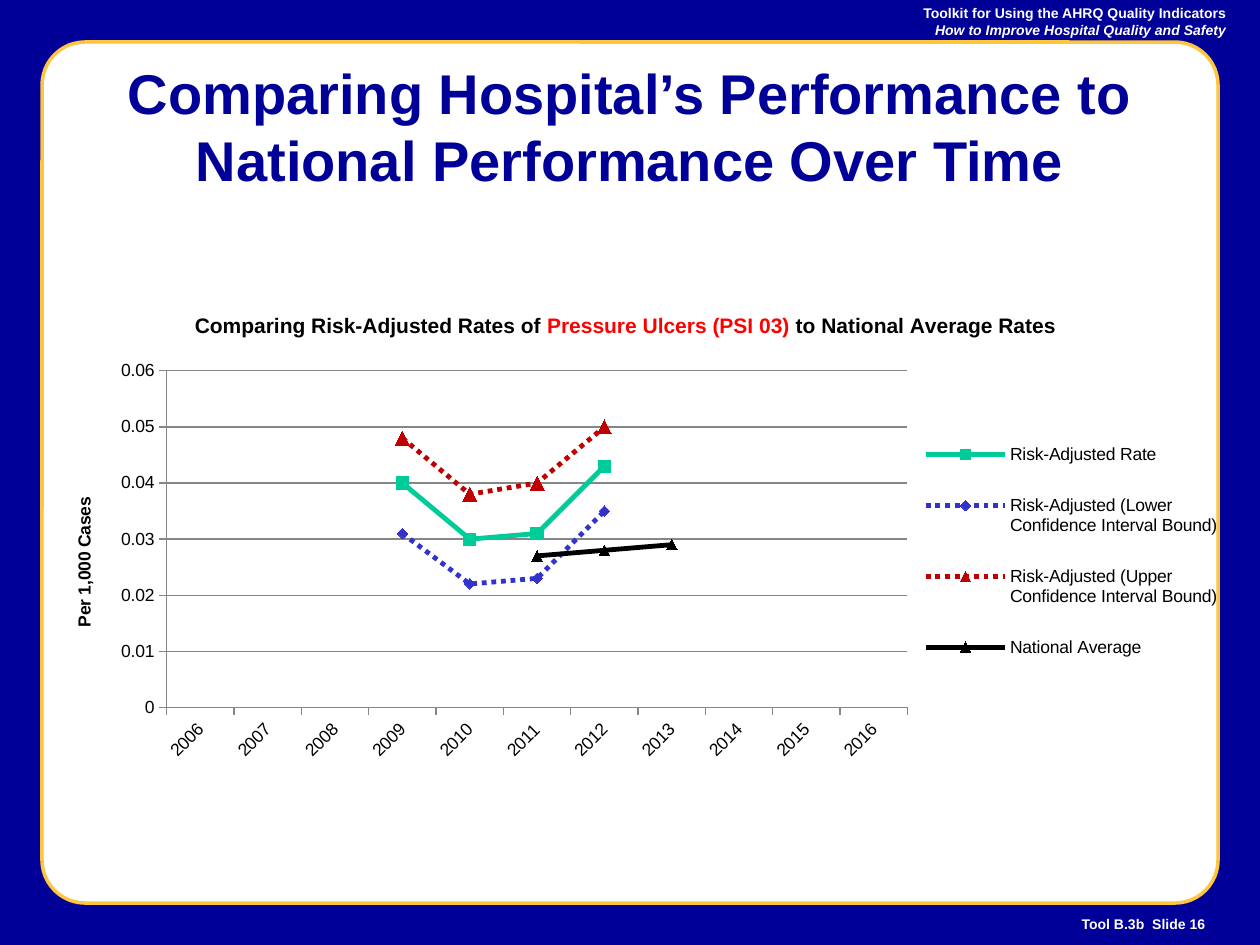
import lxml.etree
import pptx
import pptx.chart.data
import pptx.dml.color
import pptx.enum.chart
import pptx.enum.dml
import pptx.enum.shapes
import pptx.enum.text
import pptx.oxml.ns
import pptx.util

Pt = pptx.util.Pt
qn = pptx.oxml.ns.qn
Align = pptx.enum.text.PP_ALIGN
Marker = pptx.enum.chart.XL_MARKER_STYLE
Dash = pptx.enum.dml.MSO_LINE

NAVY, GOLD, WHITE, BLACK, GREY = "000099", "FFC53D", "FFFFFF", "000000", "868686"
YEARS = [str(year) for year in range(2006, 2017)]
# name, first year, values, colour, dash, marker, marker size
SERIES = [
    ("Risk-Adjusted Rate", 2009, [0.04, 0.03, 0.031, 0.043],
     "00CC99", Dash.SOLID, Marker.SQUARE, 7),
    ("Risk-Adjusted (Lower Confidence Interval Bound)", 2009,
     [0.031, 0.022, 0.023, 0.035], "3333CC", Dash.ROUND_DOT, Marker.DIAMOND, 6),
    ("Risk-Adjusted (Upper Confidence Interval Bound)", 2009,
     [0.048, 0.038, 0.04, 0.05], "C00000", Dash.ROUND_DOT, Marker.TRIANGLE, 8),
    ("National Average", 2011, [0.027, 0.028, 0.029],
     BLACK, Dash.SOLID, Marker.TRIANGLE, 6),
]


def rgb(value):
    return pptx.dml.color.RGBColor.from_string(value)


def set_font(font, color, **formats):
    for name, value in {"name": "Arial", **formats}.items():
        setattr(font, name, value)
    font.color.rgb = rgb(color)


def set_line(line, color, width, dash=Dash.SOLID):
    line.color.rgb = rgb(color)
    line.width = Pt(width)
    line.dash_style = dash


def add_panel(page, kind, bounds, fill):
    panel = page.shapes.add_shape(kind, *map(Pt, bounds))
    panel.shadow.inherit = False
    panel.fill.solid()
    panel.fill.fore_color.rgb = rgb(fill)
    panel.line.fill.background()
    return panel


def add_text(page, bounds, lines, align, color, **formats):
    """Lines are pairs of wording and italic."""
    box = page.shapes.add_textbox(*map(Pt, bounds))
    frame = box.text_frame
    frame.word_wrap = True
    frame.vertical_anchor = pptx.enum.text.MSO_ANCHOR.MIDDLE
    for number, (wording, italic) in enumerate(lines):
        para = frame.add_paragraph() if number else frame.paragraphs[0]
        para.alignment = align
        span = para.add_run()
        span.text = wording
        set_font(span.font, color, bold=True, italic=italic, **formats)


def place(element, after=None, **values):
    """Give a chart part a manual layout, in fractions of the chart."""
    for old in element.findall(qn("c:layout")):
        element.remove(old)
    layout = lxml.etree.Element(qn("c:layout"))
    manual = lxml.etree.SubElement(layout, qn("c:manualLayout"))
    for name, value in values.items():
        lxml.etree.SubElement(manual, qn("c:" + name)).set("val", str(value))
    if after:
        element.find(qn(after)).addnext(layout)
    else:
        element.insert(0, layout)


def write_title(title, spans, size, x, y):
    para = title.text_frame.paragraphs[0]
    for wording, color in spans:
        span = para.add_run()
        span.text = wording
        set_font(span.font, color, size=Pt(size), bold=True)
    place(title._element, "c:tx", xMode="edge", yMode="edge", x=x, y=y)


def style_series(line, color, dash, marker, size):
    line.smooth = False
    set_line(line.format.line, color, 2.75, dash)
    line.marker.style = marker
    line.marker.size = size
    line.marker.format.fill.solid()
    line.marker.format.fill.fore_color.rgb = rgb(color)
    set_line(line.marker.format.line, color, 0.75)


def style_axes(chart):
    for axis in (chart.category_axis, chart.value_axis):
        axis.major_tick_mark = pptx.enum.chart.XL_TICK_MARK.OUTSIDE
        set_line(axis.format.line, GREY, 0.75)
        set_font(axis.tick_labels.font, BLACK, size=Pt(10))
    years = chart.category_axis._element
    years.find(qn("c:txPr")).find(qn("a:bodyPr")).set("rot", "-2700000")
    scale = chart.value_axis
    formats = {"minimum_scale": 0, "maximum_scale": 0.06, "major_unit": 0.01,
               "has_major_gridlines": True, "has_title": True}
    for name, value in formats.items():
        setattr(scale, name, value)
    set_line(scale.major_gridlines.format.line, GREY, 0.75)
    write_title(scale.axis_title, [("Per 1,000 Cases", BLACK)], 10, 0.04, 0.4)
    frame = scale.axis_title.text_frame
    frame._txBody.find(qn("a:bodyPr")).set("rot", "-5400000")


def add_rate_chart(page, bounds):
    data = pptx.chart.data.CategoryChartData(number_format="General")
    data.categories = YEARS
    for name, start, values, *_ in SERIES:
        before = YEARS.index(str(start))
        after = len(YEARS) - before - len(values)
        data.add_series(name, [None] * before + values + [None] * after)
    chart = page.shapes.add_chart(
        pptx.enum.chart.XL_CHART_TYPE.LINE_MARKERS, *map(Pt, bounds), data).chart
    set_font(chart.font, BLACK, size=Pt(10))
    chart.plots[0].vary_by_categories = False
    for line, (*_, color, dash, marker, size) in zip(chart.plots[0].series, SERIES):
        style_series(line, color, dash, marker, size)
    style_axes(chart)
    chart.has_title = True
    write_title(chart.chart_title,
                [("Comparing Risk-Adjusted Rates of ", BLACK),
                 ("Pressure Ulcers (PSI 03)", "FF0000"),
                 (" to National Average Rates", BLACK)], 12, 0.14, 0.01)
    chart.has_legend = True
    chart.legend.include_in_layout = False
    set_font(chart.legend.font, BLACK, size=Pt(10))
    place(chart.legend._element, "c:legendPos", xMode="edge", yMode="edge",
          x=0.74, y=0.23, w=0.25, h=0.58)
    place(chart._chartSpace.chart.plotArea, layoutTarget="inner",
          xMode="edge", yMode="edge", x=0.12, y=0.14, w=0.61, h=0.71)


def main():
    deck = pptx.Presentation()
    deck.slide_width, deck.slide_height = Pt(720), Pt(540)
    page = deck.slides.add_slide(deck.slide_layouts[6])
    shapes = pptx.enum.shapes.MSO_SHAPE
    add_panel(page, shapes.RECTANGLE, (0, 0, 720, 540), NAVY)
    card = add_panel(page, shapes.ROUNDED_RECTANGLE, (24, 24, 672, 492), WHITE)
    card.adjustments[0] = 0.05
    set_line(card.line, GOLD, 2)
    add_text(page, (12, 0, 696, 24),
             [("Toolkit for Using the AHRQ Quality Indicators", False),
              ("How to Improve Hospital Quality and Safety", True)],
             Align.RIGHT, WHITE, size=Pt(8))
    add_text(page, (12, 516, 684, 24), [("Tool B.3b  Slide 16", False)],
             Align.RIGHT, WHITE, size=Pt(8))
    add_text(page, (54, 36, 612, 72),
             [("Comparing Hospital’s Performance to National Performance Over Time", False)],
             Align.CENTER, NAVY, size=Pt(32))
    add_rate_chart(page, (12, 174, 694, 271))
    deck.save("out.pptx")


if __name__ == "__main__":
    main()
